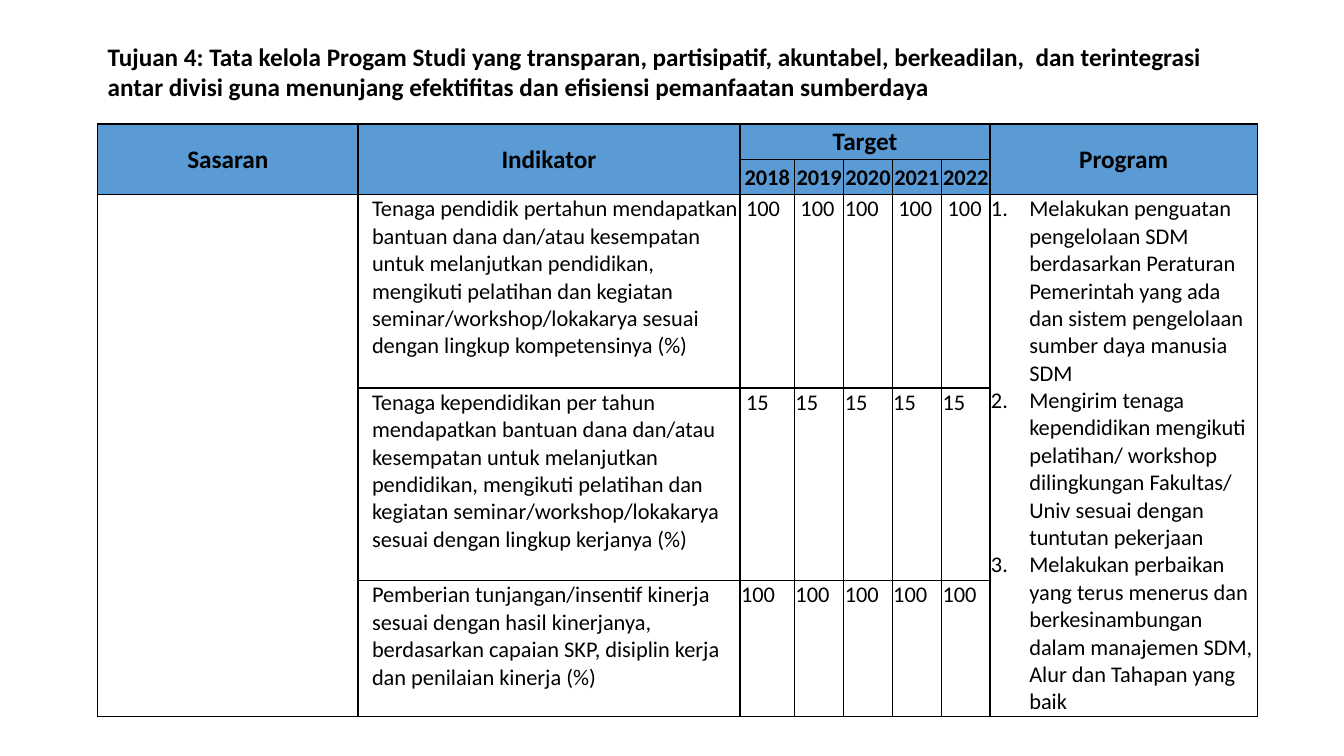
"""Build the slide on targets and programmes for study programme governance."""
from dataclasses import dataclass

from lxml import etree
from pptx import Presentation
from pptx.dml.color import RGBColor
from pptx.enum.text import MSO_ANCHOR, MSO_AUTO_SIZE, PP_ALIGN
from pptx.oxml.ns import qn
from pptx.slide import Slide
from pptx.table import Table, _Cell
from pptx.text.text import _Paragraph
from pptx.util import Inches, Pt

TOP, MIDDLE = MSO_ANCHOR.TOP, MSO_ANCHOR.MIDDLE
LEFT, CENTER = PP_ALIGN.LEFT, PP_ALIGN.CENTER
GROW = MSO_AUTO_SIZE.SHAPE_TO_FIT_TEXT


@dataclass(frozen=True)
class Theme:
    """Colours, type sizes and spacing."""
    font: str = "Calibri"
    ink: RGBColor = RGBColor(0x00, 0x00, 0x00)
    header_fill: RGBColor = RGBColor(0x5B, 0x9B, 0xD5)
    heading_size: float = 18
    body_size: float = 16
    border_width: float = 1
    cell_margin: float = 0.01
    indicator_indent: float = 0.13
    number_indent: float = 0.38
    value_indent: float = 0.05


@dataclass(frozen=True)
class Heading:
    """A header cell with the number of rows and columns it covers."""
    label: str
    row: int
    column: int
    rows: int = 1
    columns: int = 1
    size: float = Theme.heading_size


@dataclass(frozen=True)
class Indicator:
    """An indicator, its yearly targets and the years set slightly inward."""
    description: str
    targets: tuple[int, ...]
    indented: tuple[int, ...] = ()


THEME = Theme()
TITLE = (
    "Tujuan 4: Tata kelola Progam Studi yang transparan, partisipatif, "
    "akuntabel, berkeadilan,  dan terintegrasi antar divisi guna menunjang "
    "efektifitas dan efisiensi pemanfaatan sumberdaya"
)
YEARS = range(2018, 2023)
COLUMN_WIDTHS = (2.58, 3.79, 0.54, 0.49, 0.48, 0.49, 0.48, 2.65)
ROW_HEIGHTS = (0.35, 0.35, 1.92, 1.91, 1.35)
GOAL, INDICATOR, FIRST_YEAR, PROGRAM = 0, 1, 2, 7
HEADER_ROWS = 2
HEADINGS = [
    Heading("Sasaran", 0, GOAL, rows=HEADER_ROWS),
    Heading("Indikator", 0, INDICATOR, rows=HEADER_ROWS),
    Heading("Target", 0, FIRST_YEAR, columns=len(YEARS)),
    Heading("Program", 0, PROGRAM, rows=HEADER_ROWS),
    *(Heading(str(year), 1, column, size=THEME.body_size)
      for column, year in enumerate(YEARS, FIRST_YEAR)),
]
INDICATORS = [
    Indicator(
        "Tenaga pendidik pertahun mendapatkan bantuan dana dan/atau kesempatan "
        "untuk melanjutkan pendidikan, mengikuti pelatihan dan kegiatan "
        "seminar/workshop/lokakarya sesuai dengan lingkup kompetensinya (%)",
        (100,) * 5, (2018, 2019, 2021, 2022)),
    Indicator(
        "Tenaga kependidikan per tahun mendapatkan bantuan dana dan/atau "
        "kesempatan untuk melanjutkan pendidikan, mengikuti pelatihan dan "
        "kegiatan seminar/workshop/lokakarya sesuai dengan lingkup kerjanya (%)",
        (15,) * 5, (2018,)),
    Indicator(
        "Pemberian tunjangan/insentif kinerja sesuai dengan hasil kinerjanya, "
        "berdasarkan capaian SKP, disiplin kerja dan penilaian kinerja (%)",
        (100,) * 5),
]
PROGRAMS = [
    "Melakukan penguatan pengelolaan SDM berdasarkan Peraturan Pemerintah yang "
    "ada dan sistem pengelolaan sumber daya manusia SDM",
    "Mengirim tenaga kependidikan mengikuti pelatihan/ workshop dilingkungan "
    "Fakultas/ Univ sesuai dengan tuntutan pekerjaan",
    "Melakukan perbaikan yang terus menerus dan berkesinambungan dalam "
    "manajemen SDM, Alur dan Tahapan yang baik",
]


def write(paragraph: _Paragraph, text: str, size: float, bold: bool = False,
          align: PP_ALIGN = LEFT, indent: float = 0, numbered: bool = False) -> None:
    """Fill a paragraph and set its indent, numbering and font."""
    paragraph.text = text
    paragraph.alignment = align
    properties = paragraph._p.get_or_add_pPr()
    properties.set("marL", str(Inches(indent)))
    properties.set("indent", str(-Inches(indent) if numbered else 0))
    if numbered:
        etree.SubElement(properties, qn("a:buAutoNum"), type="arabicPeriod")
    font = paragraph.font
    font.name, font.size, font.bold = THEME.font, Pt(size), bold
    font.color.rgb = THEME.ink


def style_cell(cell: _Cell, header: bool) -> None:
    """Set the borders, fill, margins and anchor of a cell."""
    properties = cell._tc.get_or_add_tcPr()
    for side in ("lnL", "lnR", "lnT", "lnB"):
        line = etree.SubElement(properties, qn(f"a:{side}"),
                                w=str(Pt(THEME.border_width)))
        fill = etree.SubElement(line, qn("a:solidFill"))
        etree.SubElement(fill, qn("a:srgbClr"), val=str(THEME.ink))
    if header:
        cell.fill.solid()
        cell.fill.fore_color.rgb = THEME.header_fill
    else:
        cell.fill.background()
    cell.margin_left = cell.margin_right = cell.margin_top = Inches(THEME.cell_margin)
    cell.margin_bottom = 0
    cell.vertical_anchor = MIDDLE if header else TOP


def add_title(slide: Slide) -> None:
    """Add the statement of the goal."""
    box = slide.shapes.add_textbox(Inches(0.97), Inches(0.36),
                                   Inches(11.16), Inches(0.71))
    frame = box.text_frame
    frame.word_wrap = True
    frame.auto_size = GROW
    write(frame.paragraphs[0], TITLE, THEME.heading_size, bold=True)


def add_target_table(slide: Slide) -> Table:
    """Add the empty, styled table."""
    table = slide.shapes.add_table(
        len(ROW_HEIGHTS), len(COLUMN_WIDTHS), Inches(0.97), Inches(1.23),
        Inches(sum(COLUMN_WIDTHS)), Inches(sum(ROW_HEIGHTS))).table
    table.first_row = table.horz_banding = False
    for column, width in zip(table.columns, COLUMN_WIDTHS):
        column.width = Inches(width)
    for index, (row, height) in enumerate(zip(table.rows, ROW_HEIGHTS)):
        row.height = Inches(height)
        for cell in row.cells:
            style_cell(cell, header=index < HEADER_ROWS)
    return table


def fill_headings(table: Table) -> None:
    """Merge and label the header cells."""
    for heading in HEADINGS:
        cell = table.cell(heading.row, heading.column)
        if heading.rows * heading.columns > 1:
            cell.merge(table.cell(heading.row + heading.rows - 1,
                                  heading.column + heading.columns - 1))
        write(cell.text_frame.paragraphs[0], heading.label, heading.size,
              bold=True, align=CENTER)


def fill_indicators(table: Table) -> None:
    """Write each indicator with its yearly targets."""
    for row, indicator in enumerate(INDICATORS, HEADER_ROWS):
        write(table.cell(row, INDICATOR).text_frame.paragraphs[0],
              indicator.description, THEME.body_size, indent=THEME.indicator_indent)
        for column, (year, target) in enumerate(zip(YEARS, indicator.targets), FIRST_YEAR):
            indent = THEME.value_indent if year in indicator.indented else 0
            write(table.cell(row, column).text_frame.paragraphs[0], str(target),
                  THEME.body_size, indent=indent)


def fill_programs(table: Table) -> None:
    """Merge the outer columns and number the programmes."""
    for column in (GOAL, PROGRAM):
        table.cell(HEADER_ROWS, column).merge(table.cell(len(ROW_HEIGHTS) - 1, column))
    frame = table.cell(HEADER_ROWS, PROGRAM).text_frame
    for index, program in enumerate(PROGRAMS):
        paragraph = frame.add_paragraph() if index else frame.paragraphs[0]
        write(paragraph, program, THEME.body_size,
              indent=THEME.number_indent, numbered=True)


def main() -> None:
    """Build and save the presentation."""
    presentation = Presentation()
    presentation.slide_width, presentation.slide_height = Inches(13.33), Inches(7.5)
    slide = presentation.slides.add_slide(presentation.slide_layouts[6])
    table = add_target_table(slide)
    fill_headings(table)
    fill_indicators(table)
    fill_programs(table)
    add_title(slide)
    presentation.save("out.pptx")


if __name__ == "__main__":
    main()
